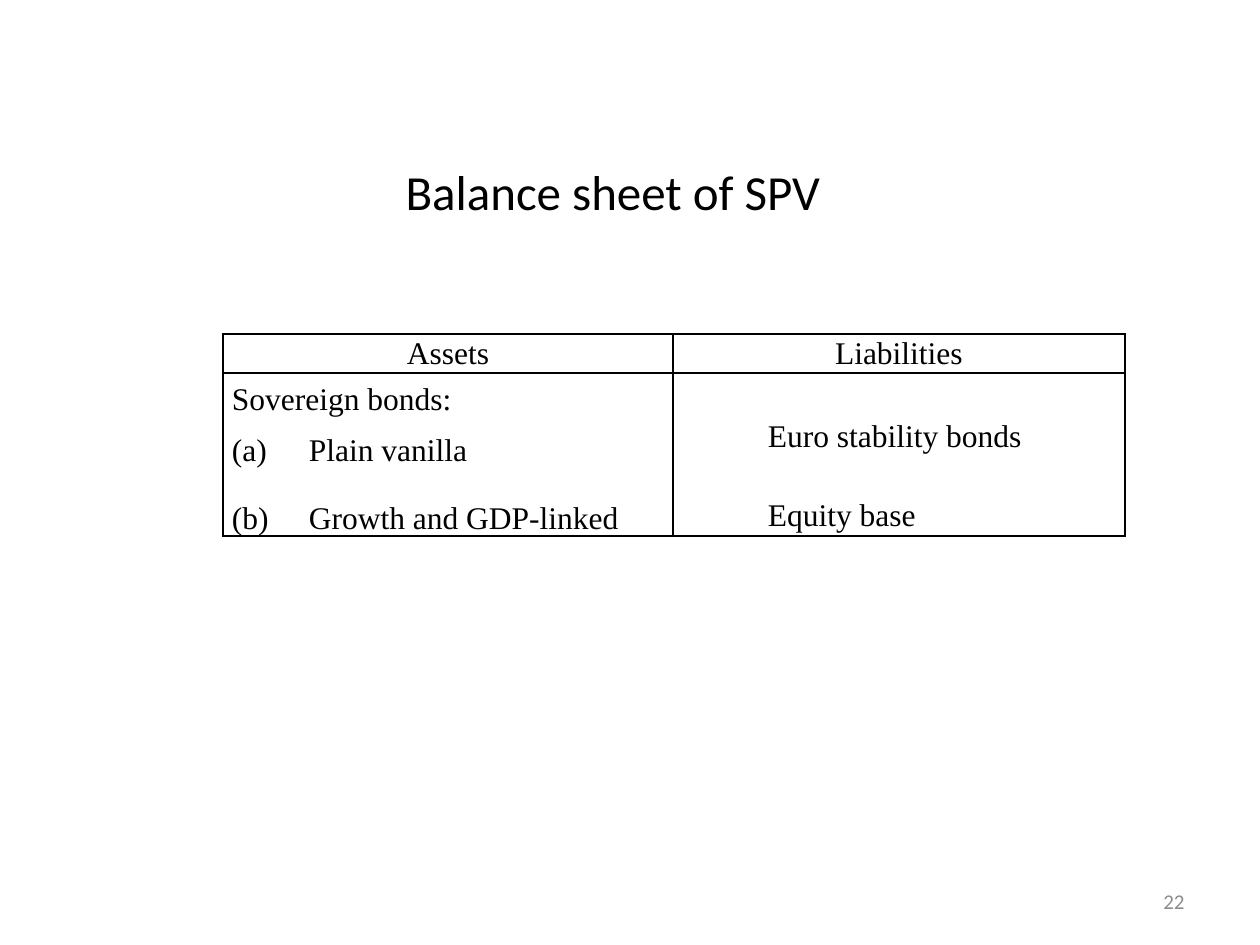
from dataclasses import dataclass

from lxml import etree
from pptx import Presentation
from pptx import util as u
from pptx.dml.color import RGBColor
from pptx.enum import text
from pptx.oxml.ns import qn

PX = u.Inches(1) // 126  # one px in EMU


@dataclass(frozen=True)
class Theme:
    ink: str = "000000"
    muted: str = "8C8C8C"
    heading_font: str = "Calibri"
    table_font: str = "Times New Roman"
    title_size: int = 28
    table_size: int = 18
    number_size: int = 12
    border_pt: int = 1


THEME = Theme()


def px(*lengths):
    return [length * PX for length in lengths]


def add_run(paragraph, words, font, size, color):
    run = paragraph.add_run()
    run.text = words
    run.font.name = font
    run.font.size = u.Pt(size)
    run.font.color.rgb = RGBColor.from_string(color)


def add_title(slide, box, words):
    title = slide.shapes.title
    title.left, title.top, title.width, title.height = px(*box)
    frame = title.text_frame
    frame.word_wrap = False
    frame.vertical_anchor = text.MSO_ANCHOR.TOP
    paragraph = frame.paragraphs[0]
    paragraph.alignment = text.PP_ALIGN.LEFT
    add_run(paragraph, words, THEME.heading_font, THEME.title_size, THEME.ink)


def outline_cell(cell):
    properties = cell._tc.get_or_add_tcPr()
    for position, side in enumerate(("a:lnL", "a:lnR", "a:lnT", "a:lnB")):
        line = etree.Element(qn(side), w=str(u.Pt(THEME.border_pt)))
        fill = etree.SubElement(line, qn("a:solidFill"))
        etree.SubElement(fill, qn("a:srgbClr"), val=THEME.ink)
        properties.insert(position, line)


def indent(paragraph, left, first, numbered=False):
    properties = paragraph._p.get_or_add_pPr()
    properties.set("marL", str(left * PX))
    properties.set("indent", str(first * PX))
    if numbered:
        etree.SubElement(properties, qn("a:buAutoNum"), type="alphaLcParenBoth")


def fill_cell(cell, lines, anchor, bottom=0):
    """Write (words, space before in pt) lines; return their paragraphs."""
    cell.fill.background()
    outline_cell(cell)
    cell.margin_left, cell.margin_right, cell.margin_top, cell.margin_bottom = px(9, 9, 0, bottom)
    cell.vertical_anchor = anchor
    frame = cell.text_frame
    for number, (words, gap) in enumerate(lines):
        paragraph = frame.add_paragraph() if number else frame.paragraphs[0]
        if gap:
            paragraph.space_before = u.Pt(gap)
        add_run(paragraph, words, THEME.table_font, THEME.table_size, THEME.ink)
    return frame.paragraphs


def add_balance_sheet(slide, box, columns, rows):
    table = slide.shapes.add_table(len(rows), len(columns), *px(*box)).table
    table.first_row = table.horz_banding = False
    for column, width in zip(table.columns, columns):
        column.width = width * PX
    for row, height in zip(table.rows, rows):
        row.height = height * PX

    # Headings
    for column, heading in enumerate(("Assets", "Liabilities")):
        (paragraph,) = fill_cell(table.cell(0, column), [(heading, 0)], text.MSO_ANCHOR.MIDDLE)
        paragraph.alignment = text.PP_ALIGN.CENTER

    # Assets: an opening line and a lettered list
    assets = [("Sovereign bonds:", 0), ("Plain vanilla", 9), ("Growth and GDP-linked", 19)]
    for paragraph in fill_cell(table.cell(1, 0), assets, text.MSO_ANCHOR.BOTTOM)[1:]:
        indent(paragraph, 77, -77, numbered=True)

    # Liabilities
    liabilities = [("Euro stability bonds", 0), ("Equity base", 25)]
    for paragraph in fill_cell(table.cell(1, 1), liabilities, text.MSO_ANCHOR.BOTTOM, 3):
        indent(paragraph, 0, 86)


def add_page_number(slide, box, number):
    frame = slide.shapes.add_textbox(*px(*box)).text_frame
    frame.word_wrap = True
    frame.vertical_anchor = text.MSO_ANCHOR.MIDDLE
    paragraph = frame.paragraphs[0]
    paragraph.alignment = text.PP_ALIGN.RIGHT
    add_run(paragraph, number, THEME.heading_font, THEME.number_size, THEME.muted)


def main():
    deck = Presentation()
    deck.slide_width, deck.slide_height = px(1260, 945)
    slide = deck.slides.add_slide(deck.slide_layouts[5])
    add_title(slide, (393, 155, 445, 72), "Balance sheet of SPV")
    add_balance_sheet(slide, (223, 334, 902, 202), (450, 452), (39, 163))
    add_page_number(slide, (903, 876, 294, 50), "22")
    deck.save("out.pptx")


if __name__ == "__main__":
    main()
